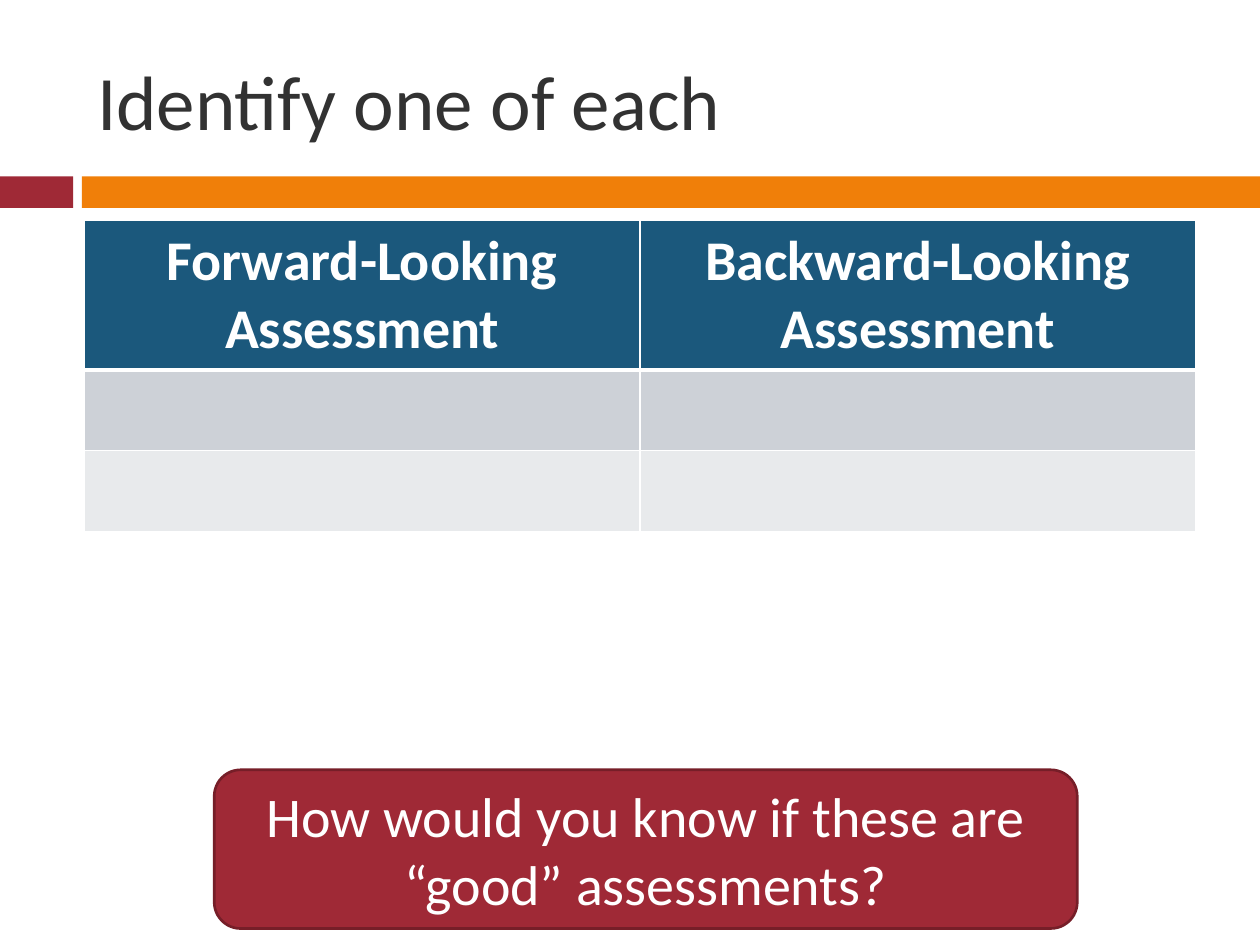
import pptx
import pptx.util
import pptx.dml.color
import pptx.enum.shapes
import pptx.enum.text
import pptx.oxml
import pptx.oxml.ns

Inches, Pt = pptx.util.Inches, pptx.util.Pt
RGB = pptx.dml.color.RGBColor
SHAPE = pptx.enum.shapes.MSO_SHAPE
ALIGN = pptx.enum.text.PP_ALIGN
MIDDLE = pptx.enum.text.MSO_ANCHOR.MIDDLE

RED = RGB(0x9F, 0x29, 0x36)
DARK_RED = RGB(0x76, 0x1E, 0x28)
ORANGE = RGB(0xF0, 0x7F, 0x09)
BLUE = RGB(0x1B, 0x58, 0x7C)
BAND_DARK = RGB(0xCD, 0xD1, 0xD7)
BAND_LIGHT = RGB(0xE8, 0xEA, 0xEC)
INK = RGB(0x32, 0x32, 0x32)
WHITE = RGB(0xFF, 0xFF, 0xFF)


def write(tf, text, size, color, align, bold=False):
    tf.text = text
    p = tf.paragraphs[0]
    p.alignment = align
    font = p.runs[0].font
    font.name, font.size, font.bold = "Calibri", Pt(size), bold
    font.color.rgb = color


def add_block(kind, left, top, width, height, fill):
    sp = s.shapes.add_shape(kind, Inches(left), Inches(top), Inches(width), Inches(height))
    sp.shadow.inherit = False
    sp.fill.solid()
    sp.fill.fore_color.rgb = fill
    sp.line.fill.background()
    return sp


prs = pptx.Presentation()
prs.slide_width, prs.slide_height = Inches(10), Inches(7.5)
s = prs.slides.add_slide(prs.slide_layouts[5])

# Two-colour band under the title
add_block(SHAPE.RECTANGLE, 0, 1.4, 0.58, 0.25, RED)
add_block(SHAPE.RECTANGLE, 0.65, 1.4, 9.35, 0.25, ORANGE)

# Title
title = s.shapes.title
title.left, title.top = Inches(0.67), Inches(0.25)
title.width, title.height = Inches(8.92), Inches(1.08)
tf = title.text_frame
write(tf, "Identify one of each", 44, INK, ALIGN.LEFT)
tf.vertical_anchor = MIDDLE
tf.word_wrap = True

# Table: header and two empty rows
headers = ["Forward-Looking Assessment", "Backward-Looking Assessment"]
heights = [1.17, 0.64, 0.64]
fills = [BLUE, BAND_DARK, BAND_LIGHT]
table = s.shapes.add_table(len(heights), len(headers), Inches(0.67), Inches(1.75),
                           Inches(8.82), Inches(sum(heights))).table
for i, (height, fill) in enumerate(zip(heights, fills)):
    table.rows[i].height = Inches(height)
    for j, header in enumerate(headers):
        cell = table.cell(i, j)
        if i == 0:
            write(cell.text_frame, header, 32, WHITE, ALIGN.CENTER, bold=True)
        # White borders, thicker between header and body
        tc_pr = cell._tc.get_or_add_tcPr()
        widths = {"L": 1, "R": 1, "T": 3 if i == 1 else 1, "B": 3 if i == 0 else 1}
        for side, width in widths.items():
            tc_pr.append(pptx.oxml.parse_xml(
                f'<a:ln{side} {pptx.oxml.ns.nsdecls("a")} w="{Pt(width)}">'
                f'<a:solidFill><a:srgbClr val="{WHITE}"/></a:solidFill></a:ln{side}>'))
        cell.fill.solid()
        cell.fill.fore_color.rgb = fill

# Question box
box = add_block(SHAPE.ROUNDED_RECTANGLE, 1.7, 6.11, 6.85, 1.26, RED)
box.line.color.rgb = DARK_RED
box.line.width = Pt(1.5)
tf = box.text_frame
tf.word_wrap = True
tf.vertical_anchor = MIDDLE
write(tf, "How would you know if these are “good” assessments?", 32, WHITE, ALIGN.CENTER)

prs.save("out.pptx")
